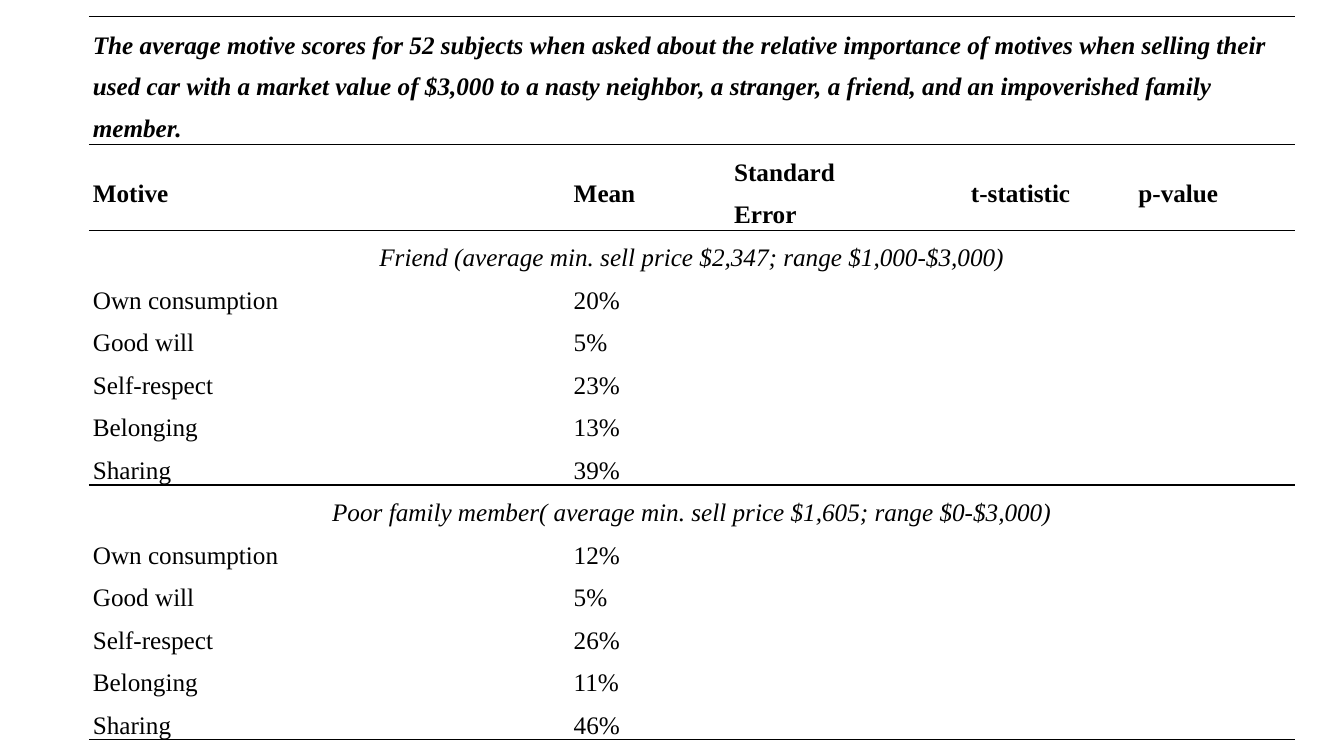
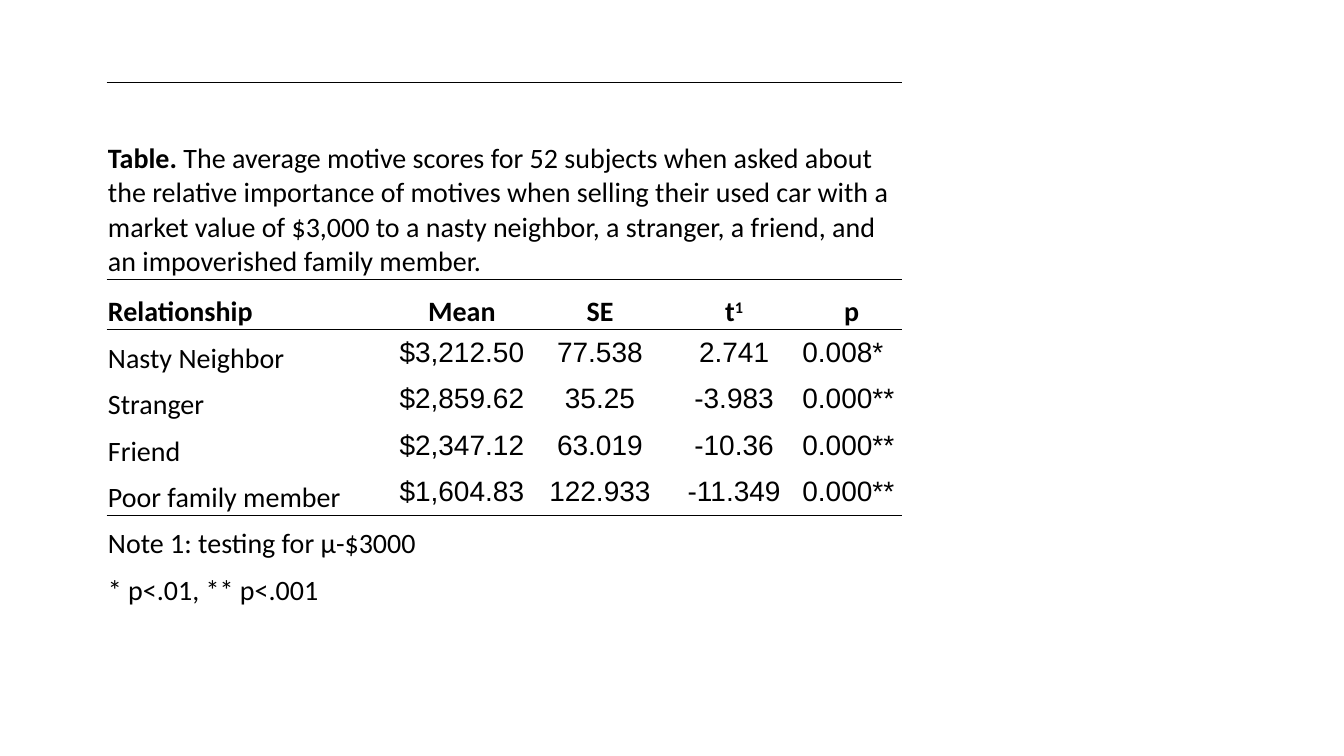
from lxml.etree import SubElement
from pptx import Presentation
from pptx.dml.color import RGBColor
from pptx.enum.text import MSO_ANCHOR as Anchor, PP_ALIGN as Align
from pptx.oxml.ns import qn
from pptx.util import Cm, Pt

INK, PAPER = "000000", "FFFFFF"
SERIF, SANS, FIGURES = "Times New Roman", "Calibri", "Arial"
BOLD, ITALIC = {"bold": True}, {"italic": True}

SURVEY = ("The average motive scores for 52 subjects when asked about the relative "
          "importance of motives when selling their used car with a market value of "
          "$3,000 to a nasty neighbor, a stranger, a friend, and an impoverished "
          "family member.")

MOTIVES = ["Own consumption", "Good will", "Self-respect", "Belonging", "Sharing"]
MOTIVE_HEADS = ["Motive", "", "Mean", "Standard\nError", "t-statistic", "p-value"]
MOTIVE_GROUPS = [
    ("Friend (average min. sell price $2,347; range $1,000-$3,000)",
     ["20%", "5%", "23%", "13%", "39%"]),
    ("Poor family member( average min. sell price $1,605; range $0-$3,000)",
     ["12%", "5%", "26%", "11%", "46%"]),
]

PRICE_HEADS = ["Relationship", "Mean", "SE", "t", "p"]
PRICES = [
    ("Nasty Neighbor", "$3,212.50", "77.538", "2.741", "0.008*"),
    ("Stranger", "$2,859.62", "35.25", "-3.983", "0.000**"),
    ("Friend", "$2,347.12", "63.019", "-10.36", "0.000**"),
    ("Poor family member", "$1,604.83", "122.933", "-11.349", "0.000**"),
]
NOTES = ["Note 1: testing for μ-$3000", "* p<.01, ** p<.001"]

# Rules map a row boundary (0 is the top edge) to a line width in points.
MOTIVE_TABLE = {
    "left": 2.24, "top": 0.41, "margin": 0.1,
    "columns": [9.45, 2.67, 4.04, 5.97, 4.22, 4.04],
    "rows": [3.23, 2.16] + [1.07] * 12,
    "rules": {0: 1, 1: 1, 2: 1, 8: 1, 14: 1},
}
PRICE_TABLE = {
    "left": 2.69, "top": 2.08, "margin": 0.03,
    "columns": [7.16, 3.58, 3.38, 3.38, 2.54],
    "rows": [4.95, 1.27] + [1.17] * 6,
    "rules": {0: 0.5, 1: 0.5, 2: 1, 6: 0.5},
}


def color(value):
    return RGBColor.from_string(value)


def set_borders(cell, above, below):
    """Draw the top and bottom lines; a width of None hides a side."""
    properties = cell._tc.get_or_add_tcPr()
    for side, width in (("L", None), ("R", None), ("T", above), ("B", below)):
        line = SubElement(properties, qn(f"a:ln{side}"))
        if width is None:
            SubElement(line, qn("a:noFill"))
        else:
            line.set("w", str(Pt(width)))
            SubElement(SubElement(line, qn("a:solidFill")), qn("a:srgbClr")).set("val", INK)


def add_ruled_table(slide, layout):
    columns, rows, rules = layout["columns"], layout["rows"], layout["rules"]
    table = slide.shapes.add_table(
        len(rows), len(columns), Cm(layout["left"]), Cm(layout["top"]),
        Cm(sum(columns)), Cm(sum(rows))).table
    table.first_row = table.horz_banding = False
    for column, width in zip(table.columns, columns):
        column.width = Cm(width)
    for number, (row, height) in enumerate(zip(table.rows, rows)):
        row.height = Cm(height)
        for cell in row.cells:
            set_borders(cell, rules.get(number), rules.get(number + 1))
            cell.fill.solid()
            cell.fill.fore_color.rgb = color(PAPER)
            cell.margin_left = cell.margin_right = Cm(layout["margin"])
            cell.margin_top = cell.margin_bottom = 0
    return table


def span(table, row, last):
    table.cell(row, 0).merge(table.cell(row, last))
    return table.cell(row, 0)


def style_run(run, face, size, bold=False, italic=False):
    font = run.font
    font.name, font.size, font.bold, font.italic = face, Pt(size), bold, italic
    font.color.rgb = color(INK)


def write(cell, text, face, size, anchor, align=Align.LEFT, spacing=1, **style):
    cell.text_frame.text = text
    cell.vertical_anchor = anchor
    for paragraph in cell.text_frame.paragraphs:
        paragraph.alignment, paragraph.line_spacing = align, spacing
        for run in paragraph.runs:
            style_run(run, face, size, **style)


def append_run(cell, text, face, size, **style):
    run = cell.text_frame.paragraphs[0].add_run()
    run.text = text
    style_run(run, face, size, **style)
    return run


def build_motives(slide):
    table = add_ruled_table(slide, MOTIVE_TABLE)
    last = len(MOTIVE_HEADS) - 1
    base = {"face": SERIF, "size": 18, "anchor": Anchor.MIDDLE, "spacing": 1.5}
    write(span(table, 0, last), SURVEY, **base, **BOLD, **ITALIC)
    for column, head in enumerate(MOTIVE_HEADS):
        if head:
            write(table.cell(1, column), head, **base, **BOLD)
    for group, (heading, means) in enumerate(MOTIVE_GROUPS):
        start = 2 + group * (len(MOTIVES) + 1)
        write(span(table, start, last), heading, align=Align.CENTER, **base, **ITALIC)
        for row, (motive, mean) in enumerate(zip(MOTIVES, means), start + 1):
            write(table.cell(row, 0), motive, **base)
            write(table.cell(row, 2), mean, **base)


def build_prices(slide):
    table = add_ruled_table(slide, PRICE_TABLE)
    last = len(PRICE_HEADS) - 1
    label = {"face": SANS, "size": 20, "anchor": Anchor.BOTTOM}
    figure = {"face": FIGURES, "size": 20, "anchor": Anchor.MIDDLE}
    caption = span(table, 0, last)
    write(caption, "Table.", **label, **BOLD)
    append_run(caption, " " + SURVEY, SANS, 20)
    for column, head in enumerate(PRICE_HEADS):
        write(table.cell(1, column), head, **label, **BOLD,
              align=Align.CENTER if column else Align.LEFT)
    note_mark = append_run(table.cell(1, PRICE_HEADS.index("t")), "1", SANS, 20, **BOLD)
    note_mark._r.get_or_add_rPr().set("baseline", "30000")
    for row, (relationship, *figures) in enumerate(PRICES, 2):
        write(table.cell(row, 0), relationship, **label)
        for column, value in enumerate(figures, 1):
            write(table.cell(row, column), value, **figure,
                  align=Align.LEFT if column == last else Align.CENTER)
    first_note = 2 + len(PRICES)
    span(table, first_note, 1)
    for row, note in enumerate(NOTES, first_note):
        write(table.cell(row, 0), note, **label)


def main():
    deck = Presentation()
    deck.slide_width, deck.slide_height = Cm(33.87), Cm(19.05)
    for build in (build_motives, build_prices):
        build(deck.slides.add_slide(deck.slide_layouts[6]))
    deck.save("out.pptx")


if __name__ == "__main__":
    main()
